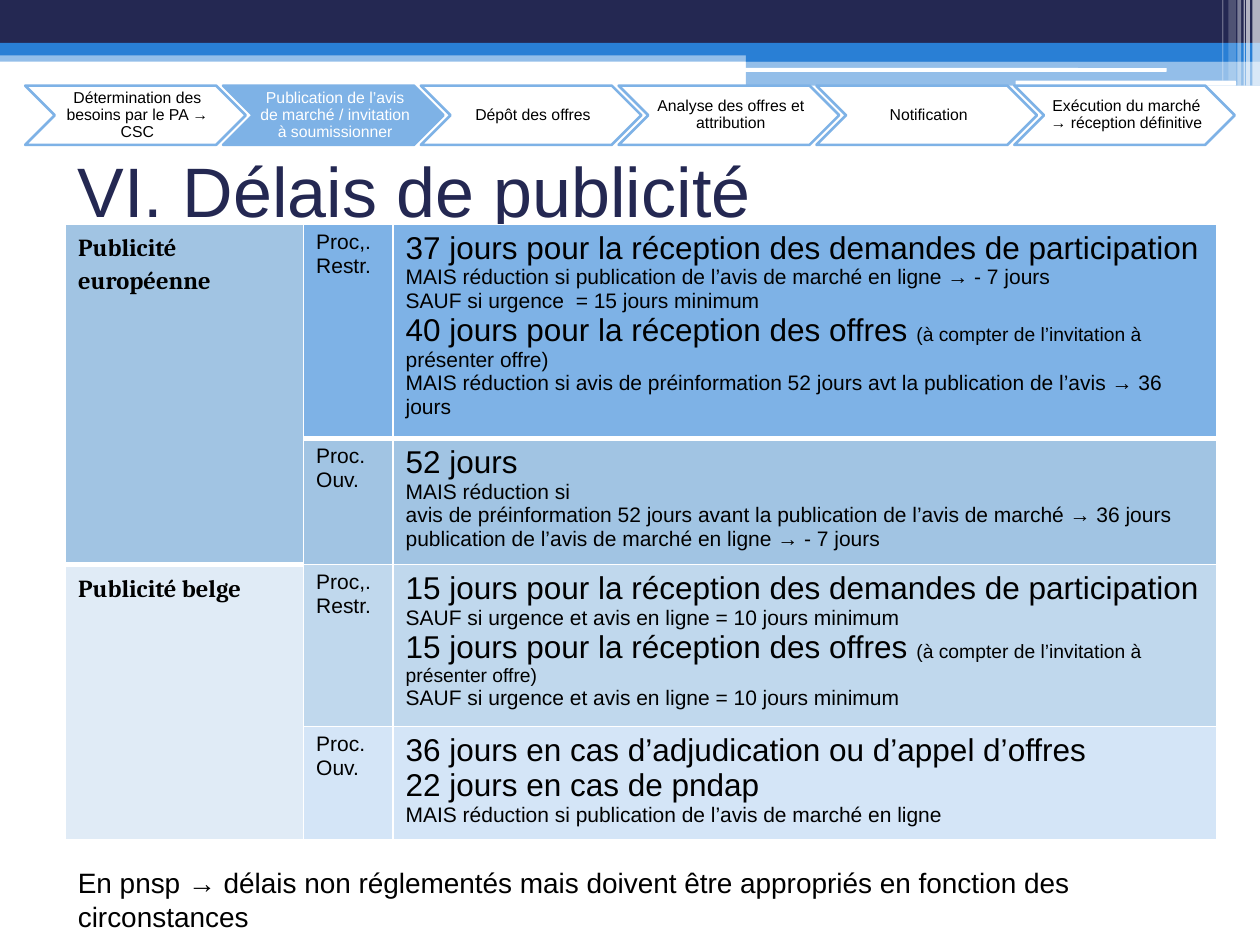
from lxml.etree import SubElement
from pptx import Presentation
from pptx.dml.color import RGBColor
from pptx.enum.shapes import MSO_SHAPE as Preset
from pptx.enum.text import MSO_ANCHOR as Anchor, PP_ALIGN as Align
from pptx.oxml.ns import qn
from pptx.util import Inches, Pt

COLORS = {
    "navy": "242852", "blue": "297FD5", "sky": "7EB2E6", "steel": "A1C4E3",
    "pale": "C0D8ED", "ice": "D4E5F7", "mist": "E0EBF6",
    "white": "FFFFFF", "black": "000000",
}

BANDS = [
    (0, 0.4, 10, 0.09, "blue", 50),
    (0, 0, 10, 0.34, "navy", 100),
    (0, 0.34, 10, 0.1, "blue", 100),
    (5.92, 0.39, 4.08, 0.1, "blue", 100),
    (5.92, 0.48, 4.08, 0.2, "blue", 50),
]
ROUNDED_LINES = [(5.91, 0.54, 3.35, 0.03), (8.06, 0.64, 1.75, 0.04)]
STRIPES = [
    (9.94, 0.06, 0.68, 65), (9.89, 0.03, 0.68, 65), (9.87, 0.01, 0.68, 60),
    (9.82, 0.03, 0.68, 40), (9.75, 0.06, 0.64, 20), (9.7, 0.01, 0.64, 30),
]

STEPS = [
    "Détermination des besoins par le PA → CSC",
    "Publication de l’avis de marché / invitation à soumissionner",
    "Dépôt des offres",
    "Analyse des offres et attribution",
    "Notification",
    "Exécution du marché → réception définitive",
]
STEP_FILLS = ["white", "sky", None, None, None, None]
STEP_PITCH = 1.57

COLUMN_WIDTHS = [1.89, 0.71, 6.54]
ROW_HEIGHTS = [1.59, 0.94, 1.21, 0.84]
ROW_FILLS = ["sky", "steel", "pale", "ice"]
GROUPS = [("Publicité européenne", "steel"), ("Publicité belge", "mist")]
PROCEDURES = [["Proc,.", "Restr."], ["Proc.", "Ouv."]]
URGENT = "SAUF si urgence et avis en ligne = 10 jours minimum"
DEADLINES = [
    [
        [("37 jours pour la réception des demandes de participation", 18)],
        [("MAIS réduction si publication de l’avis de marché en ligne → - 7 jours", 12)],
        [("SAUF si urgence  = 15 jours minimum", 12)],
        [("40 jours pour la réception des offres ", 18),
         ("(à compter de l’invitation à ", 11), ("présenter offre)", 12)],
        [("MAIS réduction si avis de préinformation 52 jours avt la publication "
          "de l’avis → 36 jours", 12)],
    ],
    [
        [("52 jours", 18)],
        [("MAIS réduction si", 12)],
        [("avis de préinformation 52 jours avant la publication de l’avis de marché "
          "→ 36 jours", 12)],
        [("publication de l’avis de marché en ligne → - 7 jours", 12)],
    ],
    [
        [("15 jours pour la réception des demandes de participation", 18)],
        [(URGENT, 12)],
        [("15 jours pour la réception des offres ", 18),
         ("(à compter de l’invitation à présenter offre)", 11)],
        [(URGENT, 12)],
    ],
    [
        [("36 jours en cas d’adjudication ou d’appel d’offres", 18)],
        [("22 jours en cas de pndap", 18)],
        [("MAIS réduction si publication de l’avis de marché en ligne", 12)],
    ],
]


class SlideBuilder:
    font = "Arial"

    def __init__(self, slide):
        self.slide = slide

    def color(self, name):
        return RGBColor.from_string(COLORS[name])

    def style(self, run, size, color="black", font=None, bold=False):
        run.font.name = font or self.font
        run.font.size = Pt(size)
        run.font.bold = bold
        run.font.color.rgb = self.color(color)

    def shape(self, preset, box, fill=None, line=None, opacity=100):
        shape = self.slide.shapes.add_shape(preset, *map(Inches, box))
        shape.shadow.inherit = False
        if fill:
            shape.fill.solid()
            shape.fill.fore_color.rgb = self.color(fill)
            if opacity < 100:
                tone = shape.fill._xPr.find(f".//{qn('a:srgbClr')}")
                SubElement(tone, qn("a:alpha"), val=str(opacity * 1000))
        else:
            shape.fill.background()
        if line:
            shape.line.color.rgb = self.color(line)
            shape.line.width = Pt(1.5)
        else:
            shape.line.fill.background()
        return shape

    def text(self, box, content, size, color="black", anchor=Anchor.TOP):
        text_frame = self.slide.shapes.add_textbox(*map(Inches, box)).text_frame
        text_frame.word_wrap = True
        text_frame.vertical_anchor = anchor
        text_frame.text = content
        self.style(text_frame.paragraphs[0].runs[0], size, color)
        return text_frame

    def step(self, left, content, fill):
        self.shape(Preset.CHEVRON, (left, 0.68, 1.75, 0.47), fill, "sky")
        text_color = "white" if fill == "sky" else "black"
        text_frame = self.text((left + 0.24, 0.68, 1.27, 0.47), content, 9,
                               text_color, Anchor.MIDDLE)
        text_frame.margin_left = Inches(0.04)
        text_frame.margin_top = text_frame.margin_right = Inches(0.01)
        text_frame.margin_bottom = Inches(0.01)
        paragraph = text_frame.paragraphs[0]
        paragraph.alignment = Align.CENTER
        paragraph.line_spacing = 0.9

    def table(self, left, top, widths, heights):
        frame = self.slide.shapes.add_table(
            len(heights), len(widths), Inches(left), Inches(top),
            Inches(sum(widths)), Inches(sum(heights)))
        table = frame.table
        table.first_row = table.horz_banding = False
        for column, width in zip(table.columns, widths):
            column.width = Inches(width)
        for row, height in zip(table.rows, heights):
            row.height = Inches(height)
        return table

    def cell(self, cell, fill, lines, bottom=1, **style):
        properties = cell._tc.get_or_add_tcPr()
        for side, width in zip("LRTB", (1, 1, 1, bottom)):
            border = SubElement(properties, qn(f"a:ln{side}"), w=str(Pt(width)))
            solid = SubElement(border, qn("a:solidFill"))
            SubElement(solid, qn("a:srgbClr"), val=COLORS["white"])
        cell.fill.solid()
        cell.fill.fore_color.rgb = self.color(fill)
        for index, pieces in enumerate(lines):
            paragraphs = cell.text_frame.paragraphs
            paragraph = paragraphs[0] if index == 0 else cell.text_frame.add_paragraph()
            for content, size in pieces:
                run = paragraph.add_run()
                run.text = content
                self.style(run, size, **style)


def main():
    presentation = Presentation()
    presentation.slide_width = Inches(10)
    presentation.slide_height = Inches(7.5)
    builder = SlideBuilder(presentation.slides.add_slide(presentation.slide_layouts[6]))

    for *box, fill, opacity in BANDS:
        builder.shape(Preset.RECTANGLE, box, fill, opacity=opacity)
    for box in ROUNDED_LINES:
        builder.shape(Preset.ROUNDED_RECTANGLE, box, "white")
    for left, width, height, opacity in STRIPES:
        builder.shape(Preset.RECTANGLE, (left, 0, width, height), "white", opacity=opacity)

    builder.text((0.52, 0.92, 9, 1.17), "VI. Délais de publicité", 40, "navy", Anchor.MIDDLE)
    for index, (content, fill) in enumerate(zip(STEPS, STEP_FILLS)):
        builder.step(0.2 + index * STEP_PITCH, content, fill)

    table = builder.table(0.52, 1.78, COLUMN_WIDTHS, ROW_HEIGHTS)
    for index, (label, fill) in enumerate(GROUPS):
        cell = table.cell(2 * index, 0)
        cell.merge(table.cell(2 * index + 1, 0))
        builder.cell(cell, fill, [[(label, 14)]], 1 if index else 3,
                     font="Cambria", bold=True)
        cell.text_frame.paragraphs[0].line_spacing = 1.15
    for row, (fill, deadlines) in enumerate(zip(ROW_FILLS, DEADLINES)):
        bottom = 1 if row else 3
        procedure = [[(line, 12)] for line in PROCEDURES[row % 2]]
        builder.cell(table.cell(row, 1), fill, procedure, bottom)
        builder.cell(table.cell(row, 2), fill, deadlines, bottom)

    builder.text((0.52, 6.82, 9.13, 0.64),
                 "En pnsp → délais non réglementés mais doivent être appropriés "
                 "en fonction des circonstances", 16)
    presentation.save("out.pptx")


if __name__ == "__main__":
    main()
